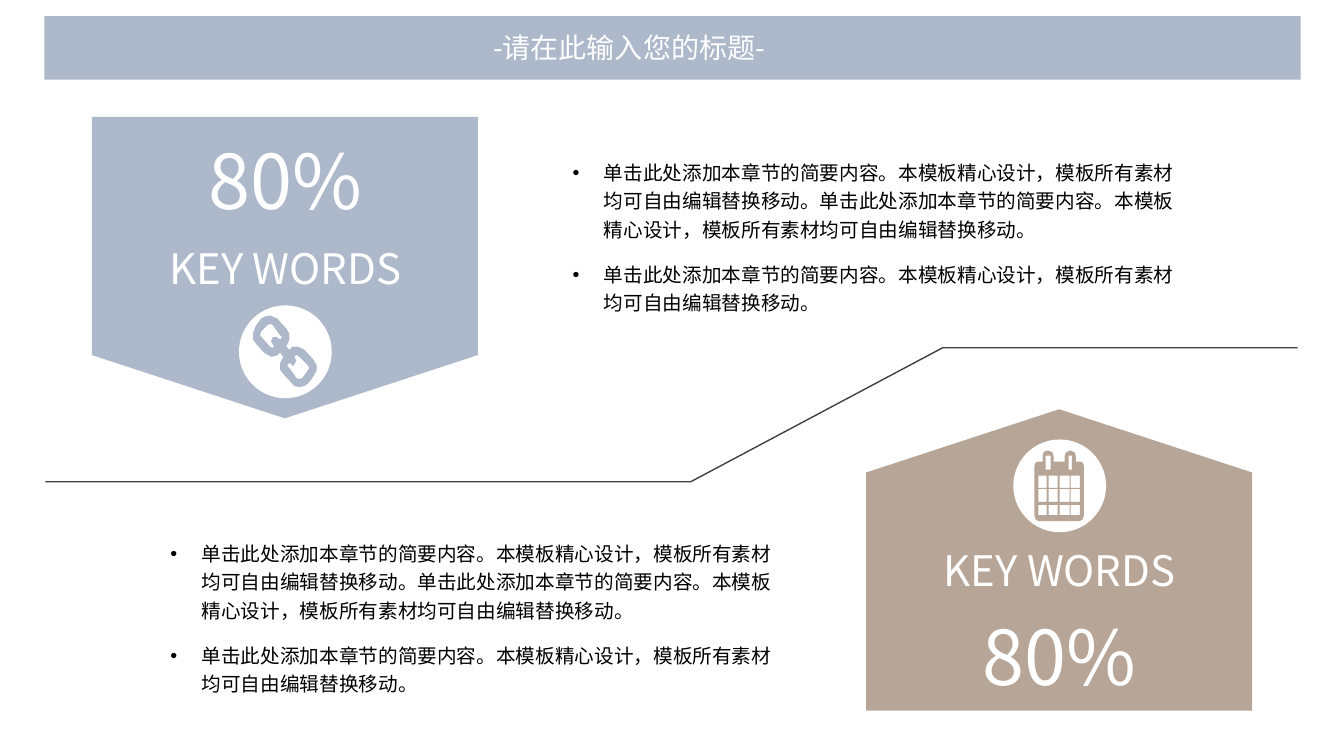
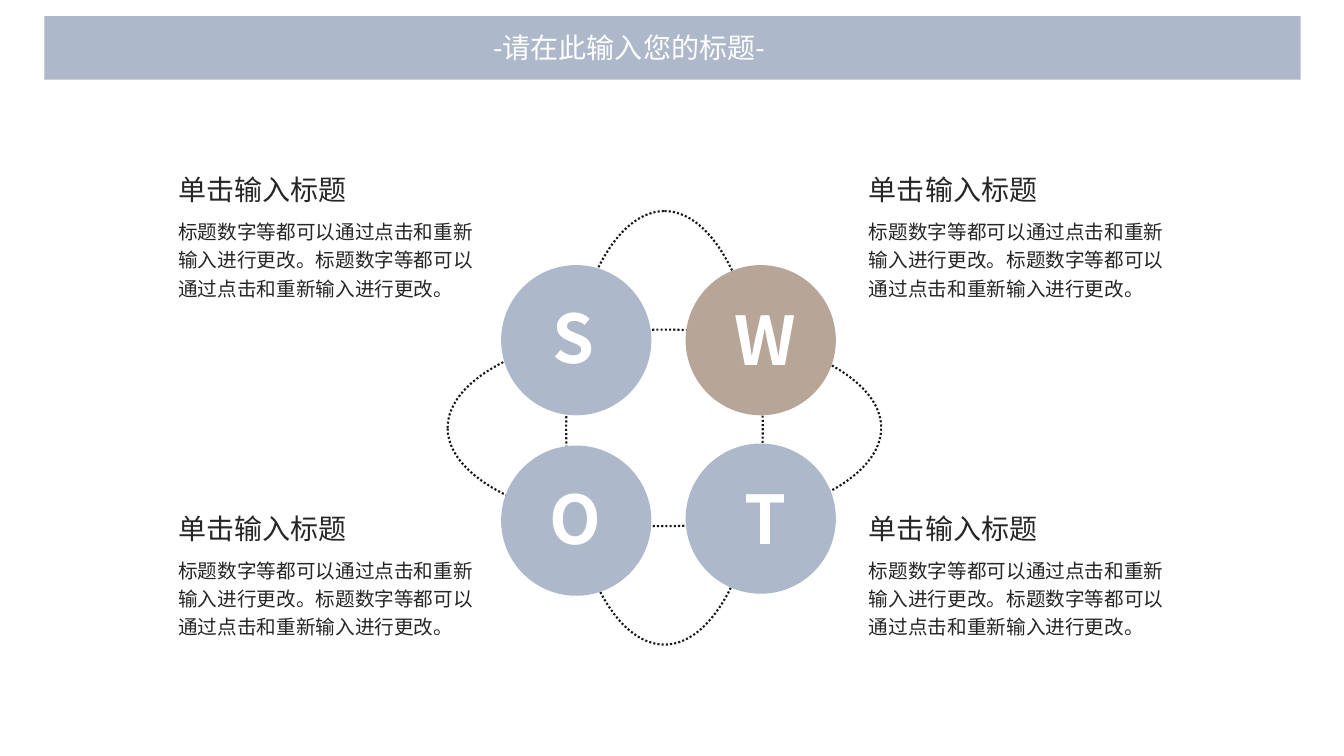
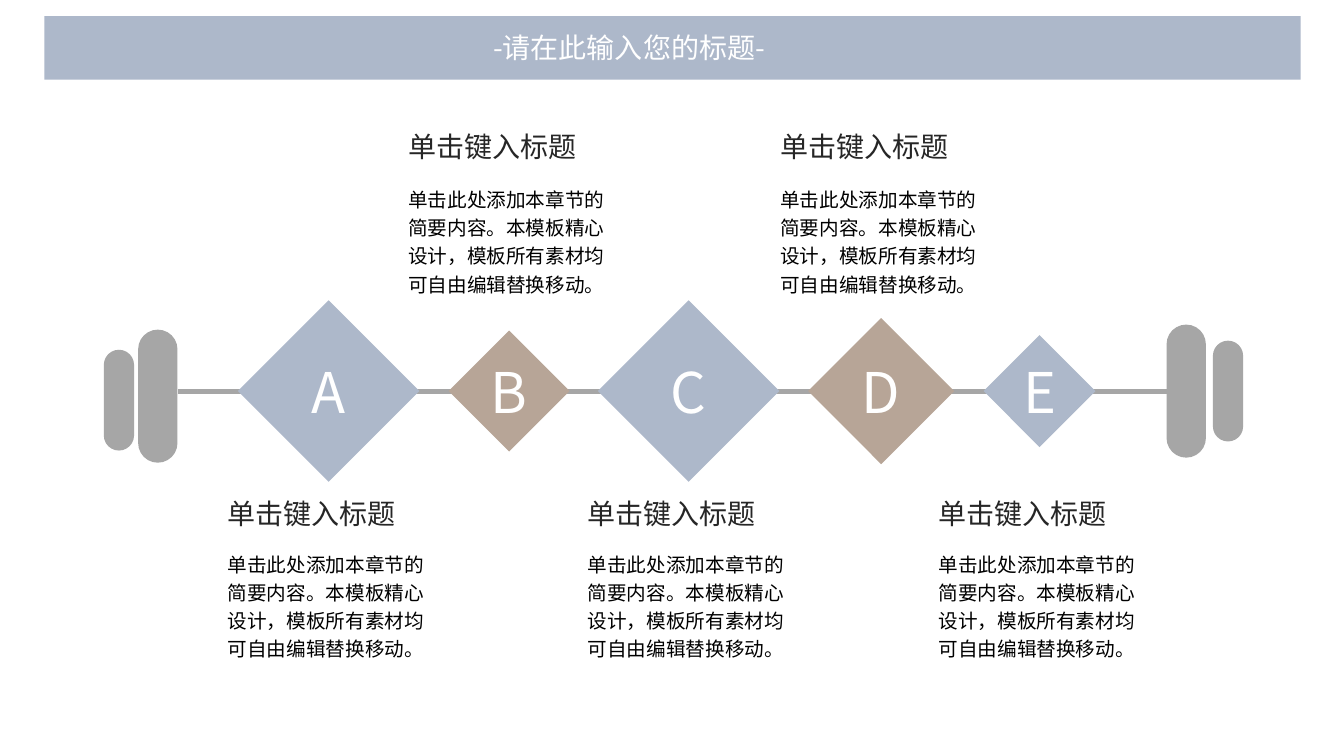
from itertools import product

from lxml.etree import SubElement
from pptx import Presentation
from pptx.dml.color import RGBColor
from pptx.enum.dml import MSO_LINE
from pptx.enum.shapes import MSO_CONNECTOR, MSO_SHAPE
from pptx.enum.text import MSO_ANCHOR, MSO_AUTO_SIZE, PP_ALIGN
from pptx.oxml.ns import qn
from pptx.util import Inches, Pt

FONT = "Noto Sans CJK SC"
COLORS = {
    "blue": "ADB8CA",
    "tan": "B7A597",
    "gray": "A6A6A6",
    "white": "FFFFFF",
    "black": "000000",
    "heading": "262626",
    "path": "404040",
    "dots": "181715",
}
TITLE = "-请在此输入您的标题-"
SENTENCE = "单击此处添加本章节的简要内容。本模板精心设计，模板所有素材均可自由编辑替换移动。"
LIST_ITEMS = [
    SENTENCE + SENTENCE,
    SENTENCE,
]
SWOT_BODY = "标题数字等都可以通过点击和重新输入进行更改。" * 2
BODY_LEADING = Pt(20.2)

LINK_CONTOURS = [
    [(3.1, 3.75), (3.05, 3.81), (3.02, 3.83), (2.97, 3.84), (2.92, 3.83), (2.81, 3.71),
     (2.78, 3.67), (2.78, 3.6), (2.81, 3.54), (2.78, 3.5), (2.74, 3.53), (2.69, 3.54),
     (2.62, 3.5), (2.54, 3.41), (2.51, 3.37), (2.51, 3.3), (2.54, 3.23), (2.59, 3.16),
     (2.63, 3.14), (2.68, 3.13), (2.75, 3.16), (2.84, 3.26), (2.87, 3.31), (2.87, 3.37),
     (2.84, 3.44), (2.87, 3.47), (2.9, 3.44), (2.96, 3.44), (3.02, 3.47), (3.11, 3.57),
     (3.14, 3.62), (3.14, 3.68)],
    [(2.78, 3.33), (2.71, 3.23), (2.68, 3.21), (2.65, 3.23), (2.59, 3.29), (2.58, 3.33),
     (2.59, 3.34), (2.68, 3.44), (2.7, 3.45), (2.72, 3.44), (2.69, 3.39), (2.7, 3.35),
     (2.74, 3.34), (2.78, 3.37), (2.8, 3.34)],
    [(3.05, 3.62), (2.97, 3.54), (2.94, 3.52), (2.92, 3.54), (2.94, 3.58), (2.91, 3.63),
     (2.87, 3.6), (2.85, 3.63), (2.87, 3.65), (2.94, 3.75), (2.97, 3.76), (3, 3.75),
     (3.05, 3.68), (3.07, 3.65)],
]
CALENDAR_OUTLINE = [
    (10.75, 5.11), (10.74, 5.15), (10.71, 5.17), (10.3, 5.17), (10.27, 5.15), (10.26, 5.11),
    (10.26, 4.62), (10.27, 4.59), (10.3, 4.58), (10.34, 4.58), (10.34, 4.53), (10.35, 4.49),
    (10.38, 4.47), (10.4, 4.47), (10.44, 4.49), (10.45, 4.53), (10.45, 4.58), (10.56, 4.58),
    (10.56, 4.53), (10.57, 4.49), (10.61, 4.47), (10.62, 4.47), (10.66, 4.49), (10.67, 4.53),
    (10.67, 4.58), (10.71, 4.58), (10.74, 4.59), (10.75, 4.62),
]
DAY_COLUMNS = [(10.3, 10.38), (10.4, 10.49), (10.51, 10.61), (10.62, 10.71)]
WEEK_ROWS = [(4.72, 4.84), (4.85, 4.98), (5.01, 5.11)]
RING_HOLES = [(10.37, 10.42), (10.6, 10.63)]


def rgb(color):
    return RGBColor.from_string(COLORS[color])


def write(frame, texts, size, color, bold=False, align=PP_ALIGN.LEFT,
          anchor=MSO_ANCHOR.MIDDLE, leading=None, gap=0, wrap=True):
    frame.word_wrap = wrap
    frame.auto_size = MSO_AUTO_SIZE.NONE
    frame.vertical_anchor = anchor
    for index, text in enumerate(texts):
        paragraph = frame.add_paragraph() if index else frame.paragraphs[0]
        paragraph.alignment = align
        paragraph.space_before = Pt(0)
        paragraph.space_after = Pt(gap)
        if leading:
            paragraph.line_spacing = leading
        run = paragraph.add_run()
        run.text = text
        run.font.size = Pt(size)
        run.font.bold = bold
        run.font.name = FONT
        run.font.color.rgb = rgb(color)
        SubElement(run._r.get_or_add_rPr(), qn("a:ea"), typeface=FONT)


def place(target, left, top, width, height):
    target.left, target.top = Inches(left), Inches(top)
    target.width, target.height = Inches(width), Inches(height)


def add_text(slide, box, text, size, color, **style):
    label = slide.shapes.add_textbox(*map(Inches, box))
    write(label.text_frame, [text], size, color, **style)


def paint(shape, fill=None):
    shape.shadow.inherit = False
    if fill:
        shape.fill.solid()
        shape.fill.fore_color.rgb = rgb(fill)
        shape.line.fill.background()
    else:
        shape.fill.background()


def add_shape(slide, kind, box, fill=None, rotation=0, adjust=None):
    shape = slide.shapes.add_shape(kind, *map(Inches, box))
    paint(shape, fill)
    shape.rotation = rotation
    if adjust is not None:
        shape.adjustments[0] = adjust
    return shape


def add_outline(slide, contours, fill=None, close=True):
    builder = None
    for contour in contours:
        start, *rest = [(Inches(x), Inches(y)) for x, y in contour]
        if builder is None:
            builder = slide.shapes.build_freeform(*start)
        else:
            builder.move_to(*start)
        builder.add_line_segments(rest, close=close)
    outline = builder.convert_to_shape()
    paint(outline, fill)
    return outline


def add_slide(deck, layout):
    slide = deck.slides.add_slide(deck.slide_layouts[layout])
    band = add_shape(slide, MSO_SHAPE.RECTANGLE, (0.44, 0.16, 12.46, 0.63), "blue")
    slide.shapes._spTree.insert(2, band._element)
    title = slide.shapes.title
    place(title, 4.79, 0.25, 3.75, 0.44)
    write(title.text_frame, [TITLE], 20, "white", align=PP_ALIGN.JUSTIFY)
    return slide


def fill_list(placeholder, left, top):
    place(placeholder, left, top, 6.27, 1.7)
    frame = placeholder.text_frame
    write(frame, LIST_ITEMS, 14, "black", anchor=MSO_ANCHOR.TOP,
          leading=BODY_LEADING, gap=12)
    for paragraph in frame.paragraphs:
        properties = paragraph._p.get_or_add_pPr()
        properties.set("marL", str(Inches(0.31)))
        properties.set("indent", str(-Inches(0.31)))


def add_badge(slide, center, pentagon_top, rotation, color, circle_top, percent_y, words_y):
    add_shape(slide, MSO_SHAPE.PENTAGON, (center - 1.5, pentagon_top, 2.99, 3.83),
              color, rotation, 0.21)
    add_shape(slide, MSO_SHAPE.OVAL, (center - 0.46, circle_top, 0.92, 0.92), "white")
    for text, size, middle in (("80%", 54, percent_y), ("KEY WORDS", 30, words_y)):
        add_text(slide, (center - 1.5, middle - 0.4, 3, 0.8), text, size, "white",
                 align=PP_ALIGN.CENTER)


def rectangle(columns, rows):
    (left, right), (top, bottom) = columns, rows
    return [(left, top), (right, top), (right, bottom), (left, bottom)]


def build_keywords(deck):
    slide = add_slide(deck, 3)
    fill_list(slide.placeholders[1], 5.58, 1.5)
    fill_list(slide.placeholders[2], 1.59, 5.28)
    divider = add_outline(
        slide, [[(0.45, 4.78), (6.85, 4.78), (9.35, 3.45), (12.87, 3.45)]], close=False)
    divider.line.color.rgb = rgb("path")
    divider.line.width = Pt(1)
    add_badge(slide, 2.83, 0.74, 90, "blue", 3.03, 1.78, 2.66)
    add_outline(slide, LINK_CONTOURS, "blue")
    add_badge(slide, 10.51, 3.64, 270, "tan", 4.36, 6.5, 5.65)
    openings = list(product(DAY_COLUMNS, WEEK_ROWS)) + list(product(RING_HOLES, [(4.52, 4.66)]))
    add_outline(slide, [CALENDAR_OUTLINE] + [rectangle(*opening) for opening in openings], "tan")


def build_swot(deck):
    slide = add_slide(deck, 5)
    for rotation in (0, 90):
        orbit = add_shape(slide, MSO_SHAPE.OVAL, (4.44, 3.27, 4.3, 1.95), rotation=rotation)
        orbit.line.color.rgb = rgb("dots")
        orbit.line.width = Pt(1.5)
        orbit.line.dash_style = MSO_LINE.ROUND_DOT
    for letter, left, top, color, letter_center, letter_top in (
        ("S", 4.97, 2.63, "blue", 5.69, 2.88),
        ("W", 6.8, 2.63, "tan", 7.59, 2.9),
        ("T", 6.8, 4.4, "blue", 7.59, 4.68),
        ("O", 4.97, 4.42, "blue", 5.71, 4.68),
    ):
        add_shape(slide, MSO_SHAPE.OVAL, (left, top, 1.49, 1.49), color)
        add_text(slide, (letter_center - 0.42, letter_top, 0.84, 0.91), letter, 48, "white",
                 bold=True, align=PP_ALIGN.CENTER, wrap=False)
    for left, top in product((1.67, 8.52), (1.66, 5.02)):
        add_text(slide, (left, top, 2.37, 0.44), "单击输入标题", 20, "heading")
        add_text(slide, (left, top + 0.42, 3.17, 0.95), SWOT_BODY, 14, "heading",
                 leading=BODY_LEADING)


def build_barbell(deck):
    slide = add_slide(deck, 5)
    plates = [
        add_shape(slide, MSO_SHAPE.ROUNDED_RECTANGLE, box, "gray", adjust=0.5)
        for box in ((1.03, 3.47, 0.3, 1), (1.37, 3.27, 0.39, 1.32),
                    (12.03, 3.38, 0.3, 1), (11.57, 3.22, 0.39, 1.32))
    ]
    bar = slide.shapes.add_connector(
        MSO_CONNECTOR.STRAIGHT, Inches(1.77), Inches(3.88), Inches(11.57), Inches(3.88))
    bar.end_connect(plates[-1], 1)
    bar.line.color.rgb = rgb("gray")
    bar.line.width = Pt(3.5)
    SubElement(bar._element.spPr, qn("a:effectLst"))
    for index, (letter, center, size) in enumerate((
        ("A", 3.26, 1.8), ("B", 5.05, 1.2), ("C", 6.83, 1.8),
        ("D", 8.74, 1.45), ("E", 10.31, 1.11),
    )):
        above = index % 2
        diamond = add_shape(slide, MSO_SHAPE.DIAMOND,
                            (center - size / 2, 3.88 - size / 2, size, size),
                            "tan" if above else "blue")
        frame = diamond.text_frame
        frame.margin_left = frame.margin_right = frame.margin_top = frame.margin_bottom = 0
        write(frame, [letter], 40, "white", align=PP_ALIGN.CENTER, wrap=False)
        heading_top, body_top = (1.22, 1.75) if above else (4.86, 5.37)
        left = center - 1.1
        add_text(slide, (left, heading_top, 2.2, 0.47), "单击键入标题", 20, "heading")
        add_text(slide, (left, body_top, 2.2, 1.25), SENTENCE, 14, "black",
                 leading=BODY_LEADING)


def main():
    deck = Presentation()
    deck.slide_width, deck.slide_height = Inches(13.33), Inches(7.5)
    build_keywords(deck)
    build_swot(deck)
    build_barbell(deck)
    deck.save("out.pptx")


if __name__ == "__main__":
    main()
